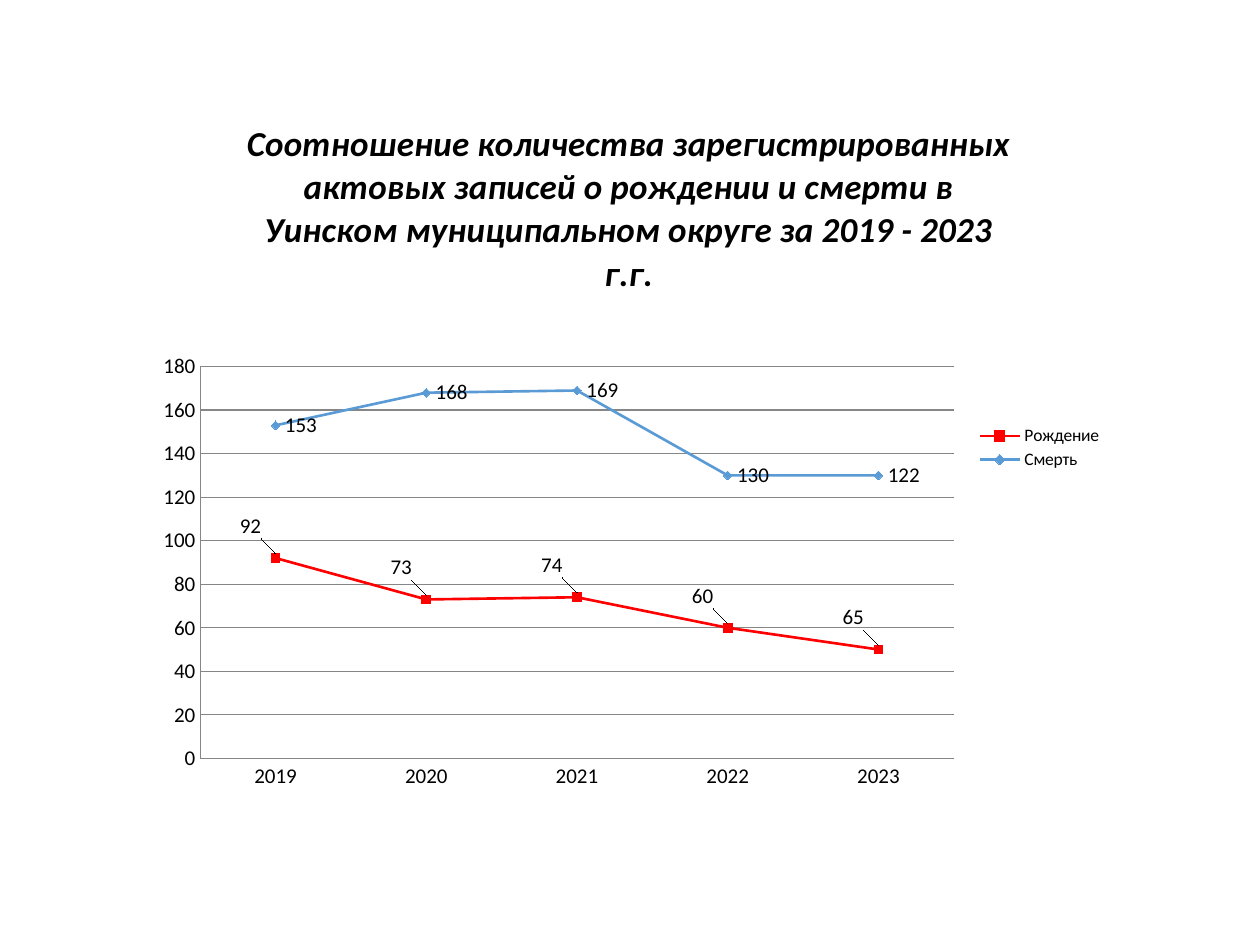
from lxml import etree
from pptx import Presentation
from pptx.chart.data import CategoryChartData
from pptx.dml.color import RGBColor
from pptx.enum.chart import (XL_CHART_TYPE, XL_LABEL_POSITION, XL_LEGEND_POSITION,
                             XL_MARKER_STYLE, XL_TICK_MARK)
from pptx.oxml import parse_xml
from pptx.oxml.ns import qn
from pptx.util import Inches, Pt

LINE_CHART = XL_CHART_TYPE.LINE_MARKERS
SQUARE, DIAMOND = XL_MARKER_STYLE.SQUARE, XL_MARKER_STYLE.DIAMOND
ABOVE, RIGHT = XL_LABEL_POSITION.ABOVE, XL_LABEL_POSITION.RIGHT
LEGEND_RIGHT = XL_LEGEND_POSITION.RIGHT
NO_TICKS = XL_TICK_MARK.NONE

BLACK = RGBColor(0, 0, 0)
RED = RGBColor(0xFF, 0, 0)
BLUE = RGBColor(0x5B, 0x9B, 0xD5)
GRAY = RGBColor(0x86, 0x86, 0x86)

FONT = "Calibri"
TITLE = ("Соотношение количества зарегистрированных актовых записей о рождении "
         "и смерти в Уинском муниципальном округе за 2019 - 2023 г.г.")
YEARS = ["2019", "2020", "2021", "2022", "2023"]
BIRTHS = ("Рождение", [92, 73, 74, 60, 50])
DEATHS = ("Смерть", [153, 168, 169, 130, 130])

# Left, top, width and height in inches; the parts are measured inside the chart.
CHART_BOX = (1.12, 0.72, 7.74, 5.66)
PLOT_BOX = (0.47, 2.19, 5.98, 3.11)
LEGEND_BOX = (6.59, 2.63, 1.08, 0.41)
LABEL_SHIFT = (-0.2, -0.08)

NO_LEADER_LINES = (
    '<c:extLst xmlns:c="http://schemas.openxmlformats.org/drawingml/2006/chart">'
    '<c:ext uri="{CE6537A1-D6FC-4f65-9D91-7224C49458BB}" '
    'xmlns:c15="http://schemas.microsoft.com/office/drawing/2012/chart">'
    '<c15:showLeaderLines val="0"/></c:ext></c:extLst>')


def format_font(font, size=12, bold=False, italic=False, color=BLACK):
    font.name = FONT
    font.size = Pt(size)
    font.bold = bold
    font.italic = italic
    font.color.rgb = color


def write_text(text_frame, text, **font_format):
    text_frame.text = text
    format_font(text_frame.paragraphs[0].runs[0].font, **font_format)


def set_layout(parent, before, box, inner=False):
    """Place a chart part, ahead of the first child with one of the given tags.

    A box of four lengths is a place in the chart; two lengths are a shift.
    """
    for old in parent.findall(qn("c:layout")):
        parent.remove(old)
    layout = etree.Element(qn("c:layout"))
    manual = etree.SubElement(layout, qn("c:manualLayout"))
    chart_width, chart_height = CHART_BOX[2:]
    settings = [("layoutTarget", "inner")] if inner else []
    if len(box) == 4:
        settings += [("xMode", "edge"), ("yMode", "edge")]
    sizes = (chart_width, chart_height) * 2
    settings += [(tag, round(length / size, 4))
                 for tag, length, size in zip("xywh", box, sizes)]
    for tag, value in settings:
        etree.SubElement(manual, qn(f"c:{tag}")).set("val", str(value))
    tags = [qn(f"c:{tag}") for tag in before]
    next(child for child in parent if child.tag in tags).addprevious(layout)


def style_series(series, color, marker_style, label_position):
    series.smooth = False
    series.format.line.color.rgb = color
    series.format.line.width = Pt(1.5)
    marker = series.marker
    marker.style = marker_style
    marker.size = 5
    marker.format.fill.solid()
    marker.format.fill.fore_color.rgb = color
    marker.format.line.color.rgb = color
    labels = series.data_labels
    labels.show_value = True
    labels.position = label_position
    format_font(labels.font)


def shift_labels(series, position, shift):
    """Move every label of the series, without leader lines."""
    for point_index in range(len(YEARS)):
        label = series.points[point_index].data_label
        if not label.has_text_frame:
            format_font(label.font)
        label.position = position
    labels = series.data_labels._element
    for element in labels.findall(qn("c:dLbl")):
        set_layout(element, ["tx", "numFmt", "spPr", "txPr", "dLblPos", "showLegendKey"],
                   shift)
    labels.append(parse_xml(NO_LEADER_LINES))


def style_axes(chart):
    for axis in (chart.category_axis, chart.value_axis):
        axis.major_tick_mark = axis.minor_tick_mark = NO_TICKS
        axis.format.line.color.rgb = GRAY
        axis.format.line.width = Pt(0.75)
        format_font(axis.tick_labels.font)
    values = chart.value_axis
    values.minimum_scale, values.maximum_scale, values.major_unit = 0, 180, 20
    values.has_major_gridlines = True
    values.major_gridlines.format.line.color.rgb = GRAY
    values.major_gridlines.format.line.width = Pt(0.75)


def add_records_chart(slide, box):
    data = CategoryChartData()
    data.categories = YEARS
    for name, values in (BIRTHS, DEATHS):
        data.add_series(name, values)
    lengths = [Inches(length) for length in box]
    chart = slide.shapes.add_chart(LINE_CHART, *lengths, data).chart
    format_font(chart.font, size=10)

    chart.has_title = True
    write_text(chart.chart_title.text_frame, TITLE, size=20, bold=True, italic=True)
    chart.chart_title.include_in_layout = False

    chart.has_legend = True
    chart.legend.position = LEGEND_RIGHT
    chart.legend.include_in_layout = False
    format_font(chart.legend.font, size=10)
    set_layout(chart.legend._element, ["overlay"], LEGEND_BOX)

    plot = chart.plots[0]
    plot.vary_by_categories = False
    set_layout(plot._element.getparent(), ["lineChart"], PLOT_BOX, inner=True)
    style_axes(chart)

    births, deaths = plot.series
    style_series(births, RED, SQUARE, ABOVE)
    style_series(deaths, BLUE, DIAMOND, RIGHT)
    for series, text in ((births, "65"), (deaths, "122")):
        last_label = series.points[len(YEARS) - 1].data_label
        write_text(last_label.text_frame, text)
        last_label.position = RIGHT
    shift_labels(births, ABOVE, LABEL_SHIFT)


def main():
    presentation = Presentation()
    presentation.slide_width, presentation.slide_height = Inches(10), Inches(7.5)
    slide = presentation.slides.add_slide(presentation.slide_layouts[6])
    add_records_chart(slide, CHART_BOX)
    presentation.save("out.pptx")


if __name__ == "__main__":
    main()
